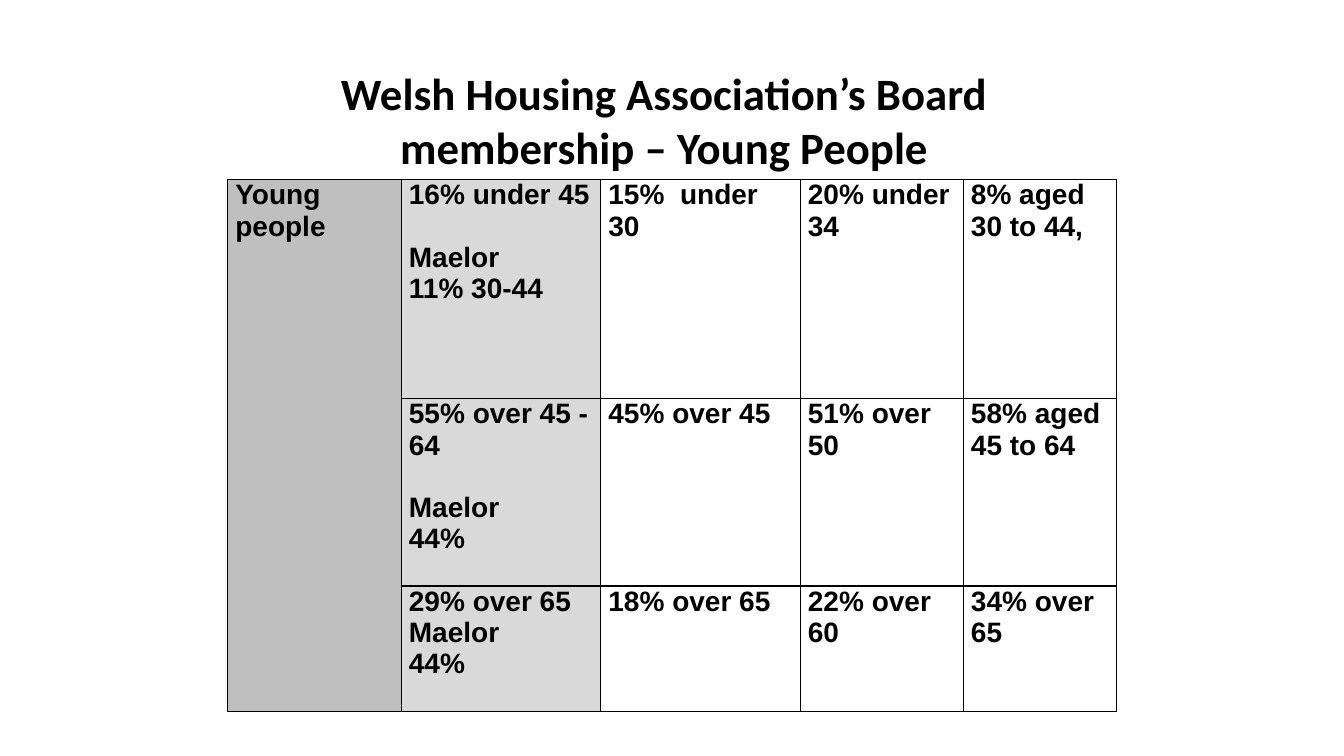
from dataclasses import dataclass

from lxml.etree import SubElement
from pptx import Presentation
from pptx.dml.color import RGBColor
from pptx.enum.text import MSO_ANCHOR, MSO_AUTO_SIZE, PP_ALIGN
from pptx.oxml.ns import qn
from pptx.util import Pt


@dataclass(frozen=True)
class Theme:
    ink: str = "000000"
    paper: str = "FFFFFF"
    group_fill: str = "BFBFBF"
    sector_fill: str = "D9D9D9"
    title_font: str = "Calibri"
    table_font: str = "Arial"
    title_size: float = 32
    table_size: float = 20
    border_width: float = 1
    blank_line: float = 22.3


@dataclass(frozen=True)
class AgeBand:
    height: float
    sector: str
    association: tuple[str, ...]
    gap: float
    others: tuple[str, ...]


THEME = Theme()
COLUMN_WIDTHS = (124, 142.5, 142.5, 116.5, 109.5)
AGE_BANDS = (
    AgeBand(156.4, "16% under 45", ("Maelor", "11% 30-44"), THEME.blank_line,
            ("15%  under 30", "20% under 34", "8% aged 30 to 44,")),
    AgeBand(134, "55% over 45 - 64", ("Maelor", "44%"), THEME.blank_line,
            ("45% over 45", "51% over 50", "58% aged 45 to 64")),
    AgeBand(89.4, "29% over 65", ("Maelor", "44%"), 0,
            ("18% over 65", "22% over 60", "34% over 65")),
)


def write(para, text: str, *, font: str, size: float,
          align: PP_ALIGN = PP_ALIGN.LEFT, before: float = 0) -> None:
    para.alignment = align
    para.space_before = Pt(before)
    span = para.add_run()
    span.text = text
    span.font.name = font
    span.font.size = Pt(size)
    span.font.bold = True
    span.font.color.rgb = RGBColor.from_string(THEME.ink)


def style_cell(cell, fill: str) -> None:
    cell.margin_left = cell.margin_right = Pt(5.4)
    cell.margin_top = cell.margin_bottom = Pt(0)
    cell.vertical_anchor = MSO_ANCHOR.TOP
    properties = cell._tc.get_or_add_tcPr()
    for side in ("a:lnL", "a:lnR", "a:lnT", "a:lnB"):
        line = SubElement(properties, qn(side), w=str(Pt(THEME.border_width)))
        solid = SubElement(line, qn("a:solidFill"))
        SubElement(solid, qn("a:srgbClr"), val=THEME.ink)
    cell.fill.solid()
    cell.fill.fore_color.rgb = RGBColor.from_string(fill)


def fill_cell(cell, lines: tuple[str, ...], *, gap: float = 0) -> None:
    for index, text in enumerate(lines):
        frame = cell.text_frame
        para = frame.add_paragraph() if index else frame.paragraphs[0]
        write(para, text, font=THEME.table_font, size=THEME.table_size,
              before=gap if index == 1 else 0)


def add_title(page) -> None:
    box = page.shapes.title
    box.left, box.top, box.width, box.height = Pt(162.7), Pt(43.2), Pt(623.5), Pt(85)
    frame = box.text_frame
    frame.word_wrap = True
    frame.auto_size = MSO_AUTO_SIZE.NONE
    frame.vertical_anchor = MSO_ANCHOR.TOP
    write(frame.paragraphs[0],
          "Welsh Housing Association’s Board membership – Young People",
          font=THEME.title_font, size=THEME.title_size, align=PP_ALIGN.CENTER)


def add_membership_table(page) -> None:
    table = page.shapes.add_table(
        len(AGE_BANDS), len(COLUMN_WIDTHS), Pt(162.7), Pt(128.2),
        Pt(sum(COLUMN_WIDTHS)), Pt(sum(band.height for band in AGE_BANDS))).table
    table.first_row = table.horz_banding = False
    for column, width in zip(table.columns, COLUMN_WIDTHS):
        column.width = Pt(width)
    fills = (THEME.group_fill, THEME.sector_fill) + (THEME.paper,) * 3
    table.cell(0, 0).merge(table.cell(len(AGE_BANDS) - 1, 0))
    fill_cell(table.cell(0, 0), ("Young people",))
    for row, band in enumerate(AGE_BANDS):
        table.rows[row].height = Pt(band.height)
        for column, fill in enumerate(fills):
            style_cell(table.cell(row, column), fill)
        fill_cell(table.cell(row, 1), (band.sector, *band.association), gap=band.gap)
        for column, text in enumerate(band.others, start=2):
            fill_cell(table.cell(row, column), (text,))


def main() -> None:
    deck = Presentation()
    deck.slide_width, deck.slide_height = Pt(960), Pt(540)
    page = deck.slides.add_slide(deck.slide_layouts[5])
    add_title(page)
    add_membership_table(page)
    deck.save("out.pptx")


if __name__ == "__main__":
    main()
